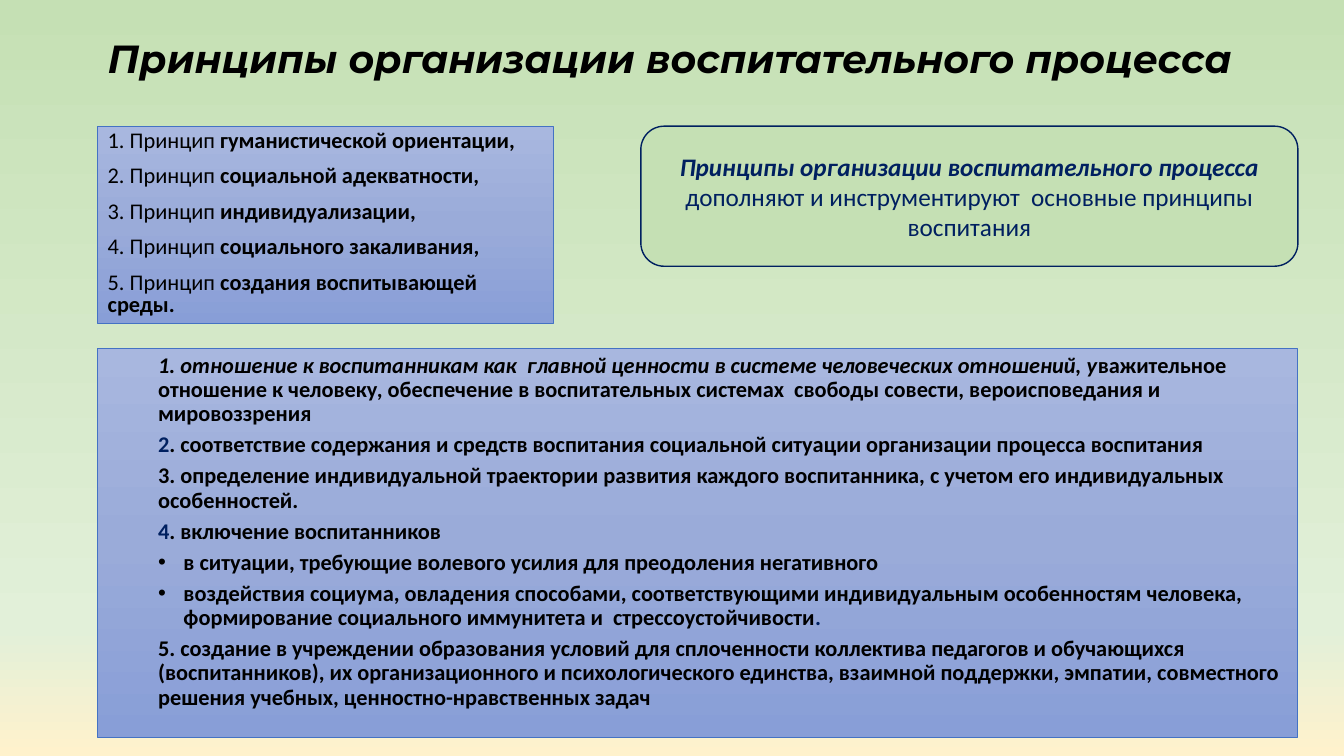
"""Builds a slide on the principles of organising the educational process."""
from dataclasses import dataclass

from lxml import etree
from pptx import Presentation
from pptx.dml.color import RGBColor
from pptx.enum.shapes import MSO_SHAPE
from pptx.enum.text import MSO_ANCHOR, MSO_AUTO_SIZE, PP_ALIGN
from pptx.oxml.ns import qn
from pptx.util import Cm, Pt

ROUNDED = MSO_SHAPE.ROUNDED_RECTANGLE
MIDDLE, TOP = MSO_ANCHOR.MIDDLE, MSO_ANCHOR.TOP
LEFT, CENTER = PP_ALIGN.LEFT, PP_ALIGN.CENTER
FIXED_SIZE = MSO_AUTO_SIZE.NONE
TWO_CONTENT = 3


@dataclass(frozen=True)
class Theme:
    heading_font: str = "Montserrat"
    body_font: str = "Calibri"
    title_size: int = 28
    callout_size: int = 18
    body_size: int = 16
    ink: str = "000000"
    navy: str = "002060"
    callout_fill: str = "C5E0B4"
    panel_line: str = "4472C4"
    panel_stops: tuple = ((0, "A8B7DF"), (50, "9AABD9"), (100, "889ED7"))
    page_stops: tuple = ((0, "C5E0B4"), (83, "E2F0D9"), (100, "FFF2CC"))


@dataclass(frozen=True)
class Span:
    text: str
    bold: bool = True
    italic: bool = False
    navy: bool = False


class SlideBuilder:
    def __init__(self, slide, theme):
        self.slide = slide
        self.theme = theme

    def gradient(self, fill, element, stops):
        fill.gradient()
        fill.gradient_angle = 270
        stop_list = next(element.iter(qn("a:gsLst")))
        for old_stop in list(stop_list):
            stop_list.remove(old_stop)
        for percent, color in stops:
            stop = etree.SubElement(stop_list, qn("a:gs"), pos=str(percent * 1000))
            etree.SubElement(stop, qn("a:srgbClr"), val=color)

    def background(self):
        self.gradient(self.slide.background.fill, self.slide.element, self.theme.page_stops)

    def place(self, box, left, top, width, height):
        box.left, box.top, box.width, box.height = Cm(left), Cm(top), Cm(width), Cm(height)

    def frame(self, box, anchor):
        text_frame = box.text_frame
        text_frame.word_wrap = True
        text_frame.auto_size = FIXED_SIZE
        text_frame.vertical_anchor = anchor
        return text_frame

    def spans(self, paragraph, spans, size, font_name):
        for span in spans:
            run = paragraph.add_run()
            run.text = span.text
            font = run.font
            font.name, font.size = font_name, Pt(size)
            font.bold, font.italic = span.bold, span.italic
            font.color.rgb = RGBColor.from_string(self.theme.navy if span.navy else self.theme.ink)

    def paragraphs(self, text_frame, lines):
        for index, line in enumerate(lines):
            paragraph = text_frame.add_paragraph() if index else text_frame.paragraphs[0]
            yield paragraph, line

    def title(self, text, *area):
        heading = self.slide.shapes.title
        self.place(heading, *area)
        paragraph = self.frame(heading, MIDDLE).paragraphs[0]
        paragraph.alignment = LEFT
        paragraph.line_spacing = 0.9
        self.spans(paragraph, [Span(text, italic=True)],
                   self.theme.title_size, self.theme.heading_font)

    def panel(self, index, lines, area, level, line_spacing, space_before):
        panel = self.slide.placeholders[index]
        self.place(panel, *area)
        self.gradient(panel.fill, panel.element, self.theme.panel_stops)
        panel.line.color.rgb = RGBColor.from_string(self.theme.panel_line)
        panel.line.width = Pt(0.5)
        for paragraph, (bulleted, spans) in self.paragraphs(self.frame(panel, TOP), lines):
            paragraph.level = level
            paragraph.alignment = LEFT
            paragraph.line_spacing = line_spacing
            paragraph.space_before = Pt(space_before)
            self.bullet(paragraph, bulleted, level)
            self.spans(paragraph, spans, self.theme.body_size, self.theme.body_font)

    def bullet(self, paragraph, bulleted, level):
        hanging = Cm(0.64) if bulleted else 0
        properties = paragraph._p.get_or_add_pPr()
        properties.set("marL", str(Cm(1.27 * level) + hanging))
        properties.set("indent", str(-hanging))
        if bulleted:
            etree.SubElement(properties, qn("a:buFont"), typeface="Arial")
            etree.SubElement(properties, qn("a:buChar"), char="•")
        else:
            etree.SubElement(properties, qn("a:buNone"))

    def callout(self, lines, *area):
        callout = self.slide.shapes.add_shape(ROUNDED, *map(Cm, area))
        callout.shadow.inherit = False
        callout.fill.solid()
        callout.fill.fore_color.rgb = RGBColor.from_string(self.theme.callout_fill)
        callout.line.color.rgb = RGBColor.from_string(self.theme.navy)
        callout.line.width = Pt(1)
        for paragraph, spans in self.paragraphs(self.frame(callout, MIDDLE), lines):
            paragraph.alignment = CENTER
            self.spans(paragraph, spans, self.theme.callout_size, self.theme.body_font)


TOPIC = "Принципы организации воспитательного процесса"
PRINCIPLES = [
    "гуманистической ориентации,",
    "социальной адекватности,",
    "индивидуализации,",
    "социального закаливания,",
    "создания воспитывающей среды.",
]
CALLOUT = [
    [Span(TOPIC, italic=True, navy=True)],
    [Span("дополняют и инструментируют  основные принципы воспитания", bold=False, navy=True)],
]
EXPLANATIONS = [
    (False, [
        Span("1. отношение к воспитанникам как  главной ценности в системе "
             "человеческих отношений, у", italic=True),
        Span("важительное отношение к человеку, обеспечение в воспитательных системах  "
             "свободы совести, вероисповедания и мировоззрения")]),
    (False, [
        Span("2", navy=True),
        Span(". соответствие содержания и средств воспитания социальной ситуации "
             "организации процесса воспитания")]),
    (False, [
        Span("3. определение индивидуальной траектории развития каждого воспитанника, "
             "с учетом его индивидуальных особенностей.")]),
    (False, [Span("4", navy=True), Span(". включение воспитанников")]),
    (True, [Span("в ситуации, требующие волевого усилия для преодоления негативного")]),
    (True, [
        Span("воздействия социума, овладения способами, соответствующими индивидуальным "
             "особенностям человека, формирование социального иммунитета и  "
             "стрессоустойчивости"),
        Span(".", navy=True)]),
    (False, [
        Span("5. создание в учреждении образования условий для сплоченности коллектива "
             "педагогов и обучающихся (воспитанников), их организационного и "
             "психологического единства, взаимной поддержки, эмпатии, совместного решения "
             "учебных, ценностно-нравственных задач")]),
]


def main():
    presentation = Presentation()
    presentation.slide_width, presentation.slide_height = Cm(33.87), Cm(19.05)
    slide = presentation.slides.add_slide(presentation.slide_layouts[TWO_CONTENT])
    builder = SlideBuilder(slide, Theme())
    left, width, upper_row = 2.46, 30.23, 3.18
    principles = [(False, [Span(f"{number}. Принцип ", bold=False), Span(name)])
                  for number, name in enumerate(PRINCIPLES, 1)]

    builder.background()
    builder.title(TOPIC, left, 0.48, width, 2.08)
    builder.panel(1, principles, (left, upper_row, 11.48, 4.98),
                  level=0, line_spacing=0.8, space_before=10)
    builder.callout(CALLOUT, 16.15, upper_row, 16.56, 3.53)
    builder.panel(2, EXPLANATIONS, (left, 8.79, width, 9.78),
                  level=1, line_spacing=0.9, space_before=5)
    presentation.save("out.pptx")


if __name__ == "__main__":
    main()
